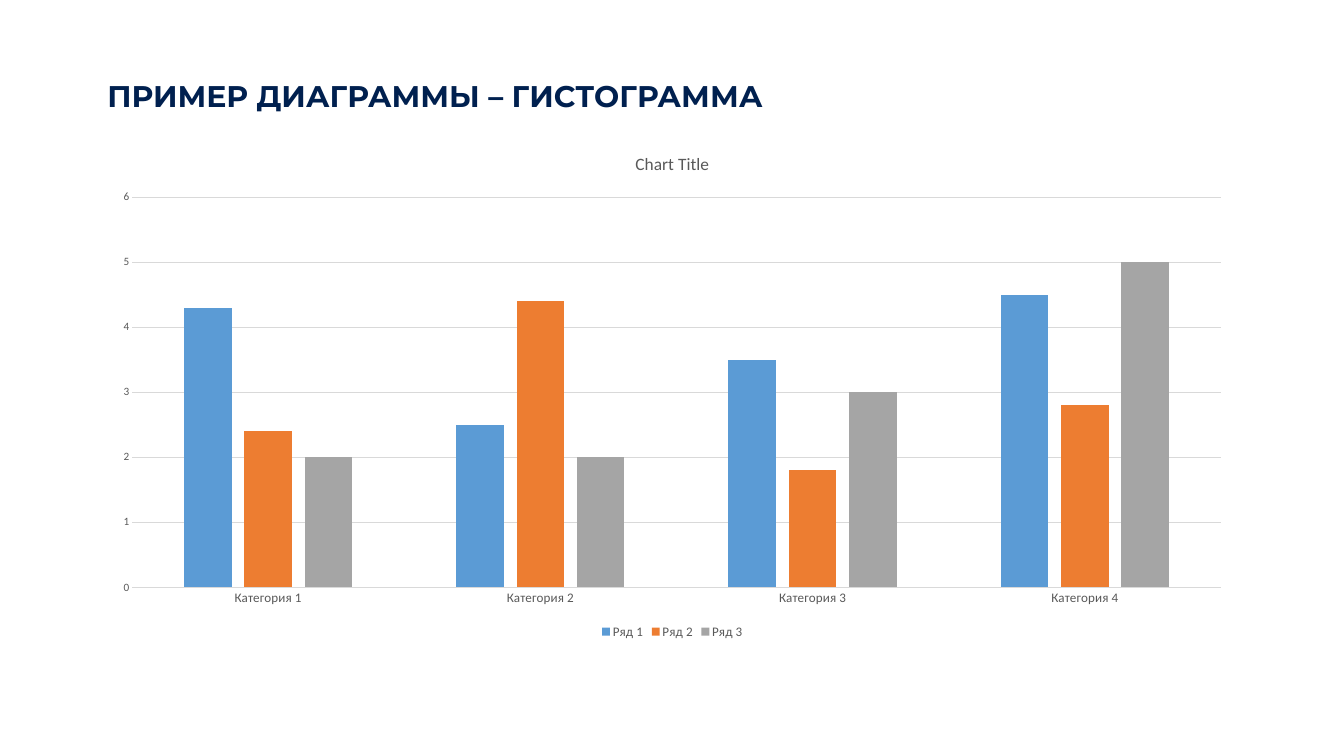
"""Build a slide with a heading and a clustered column chart."""

from dataclasses import dataclass

from pptx import Presentation
from pptx.chart.chart import Chart
from pptx.chart.data import CategoryChartData
from pptx.dml.color import RGBColor
from pptx.dml.line import LineFormat
from pptx.enum.chart import XL_CHART_TYPE, XL_LEGEND_POSITION, XL_TICK_MARK
from pptx.enum.text import MSO_ANCHOR
from pptx.slide import Slide
from pptx.text.text import Font
from pptx.util import Inches, Pt

COLUMNS = XL_CHART_TYPE.COLUMN_CLUSTERED
BOTTOM = XL_LEGEND_POSITION.BOTTOM
NO_TICKS = XL_TICK_MARK.NONE
MIDDLE = MSO_ANCHOR.MIDDLE


@dataclass(frozen=True)
class Theme:
    heading_font: str = "Montserrat"
    chart_font: str = "Calibri"
    heading_color: str = "00204F"
    text_color: str = "595959"
    grid_color: str = "D9D9D9"
    heading_size: float = 32
    chart_title_size: float = 18.6
    label_size: float = 14
    value_size: float = 12
    grid_width: float = 0.75


@dataclass(frozen=True)
class Box:
    left: float
    top: float
    width: float
    height: float

    def lengths(self) -> tuple[Inches, ...]:
        return tuple(map(Inches, (self.left, self.top, self.width, self.height)))


@dataclass(frozen=True)
class Series:
    name: str
    values: tuple[float, ...]
    color: str


THEME = Theme()
HEADING = "ПРИМЕР ДИАГРАММЫ – ГИСТОГРАММА"
HEADING_BOX = Box(1.5, 0.9, 17.28, 1.1)
CHART_BOX = Box(1.5, 2, 17.01, 7.56)
CHART_TITLE = "Chart Title"
CATEGORIES = [f"Категория {number}" for number in range(1, 5)]
SERIES = (
    Series("Ряд 1", (4.3, 2.5, 3.5, 4.5), "5B9BD5"),
    Series("Ряд 2", (2.4, 4.4, 1.8, 2.8), "ED7D31"),
    Series("Ряд 3", (2, 2, 3, 5), "A5A5A5"),
)


def apply_format(target: object, values: dict[str, object]) -> None:
    for name, value in values.items():
        setattr(target, name, value)


def style_font(font: Font, name: str, size: float, color: str, bold: bool = False) -> None:
    apply_format(font, {"name": name, "size": Pt(size), "bold": bold})
    font.color.rgb = RGBColor.from_string(color)


def style_chart_font(font: Font, size: float) -> None:
    style_font(font, THEME.chart_font, size, THEME.text_color)


def style_grid_line(line: LineFormat) -> None:
    line.color.rgb = RGBColor.from_string(THEME.grid_color)
    line.width = Pt(THEME.grid_width)


def add_heading(slide: Slide) -> None:
    text_frame = slide.shapes.add_textbox(*HEADING_BOX.lengths()).text_frame
    apply_format(text_frame, {"word_wrap": True, "vertical_anchor": MIDDLE})
    paragraph = text_frame.paragraphs[0]
    paragraph.line_spacing = 0.9
    run = paragraph.add_run()
    run.text = HEADING
    style_font(run.font, THEME.heading_font, THEME.heading_size, THEME.heading_color, True)


def style_title_and_legend(chart: Chart) -> None:
    chart.has_title = True
    paragraph = chart.chart_title.text_frame.paragraphs[0]
    run = paragraph.add_run()
    run.text = CHART_TITLE
    style_chart_font(run.font, THEME.chart_title_size)
    chart.has_legend = True
    apply_format(chart.legend, {"position": BOTTOM, "include_in_layout": False})
    style_chart_font(chart.legend.font, THEME.label_size)


def style_axes(chart: Chart) -> None:
    category_axis, value_axis = chart.category_axis, chart.value_axis
    for axis, size in ((category_axis, THEME.label_size), (value_axis, THEME.value_size)):
        apply_format(axis, {"major_tick_mark": NO_TICKS, "minor_tick_mark": NO_TICKS})
        style_chart_font(axis.tick_labels.font, size)
    style_grid_line(category_axis.format.line)
    apply_format(value_axis, {
        "minimum_scale": 0,
        "maximum_scale": 6,
        "major_unit": 1,
        "has_major_gridlines": True,
    })
    style_grid_line(value_axis.major_gridlines.format.line)
    value_axis.format.line.fill.background()


def add_column_chart(slide: Slide) -> None:
    data = CategoryChartData()
    data.categories = CATEGORIES
    for series in SERIES:
        data.add_series(series.name, series.values)
    chart = slide.shapes.add_chart(COLUMNS, *CHART_BOX.lengths(), data).chart
    style_title_and_legend(chart)
    style_axes(chart)
    plot = chart.plots[0]
    apply_format(plot, {"gap_width": 219, "overlap": -27, "vary_by_categories": False})
    for drawn, series in zip(plot.series, SERIES):
        drawn.format.fill.solid()
        drawn.format.fill.fore_color.rgb = RGBColor.from_string(series.color)


def main() -> None:
    presentation = Presentation()
    apply_format(presentation, {"slide_width": Inches(20), "slide_height": Inches(11.25)})
    slide = presentation.slides.add_slide(presentation.slide_layouts[6])
    add_heading(slide)
    add_column_chart(slide)
    presentation.save("out.pptx")


if __name__ == "__main__":
    main()
